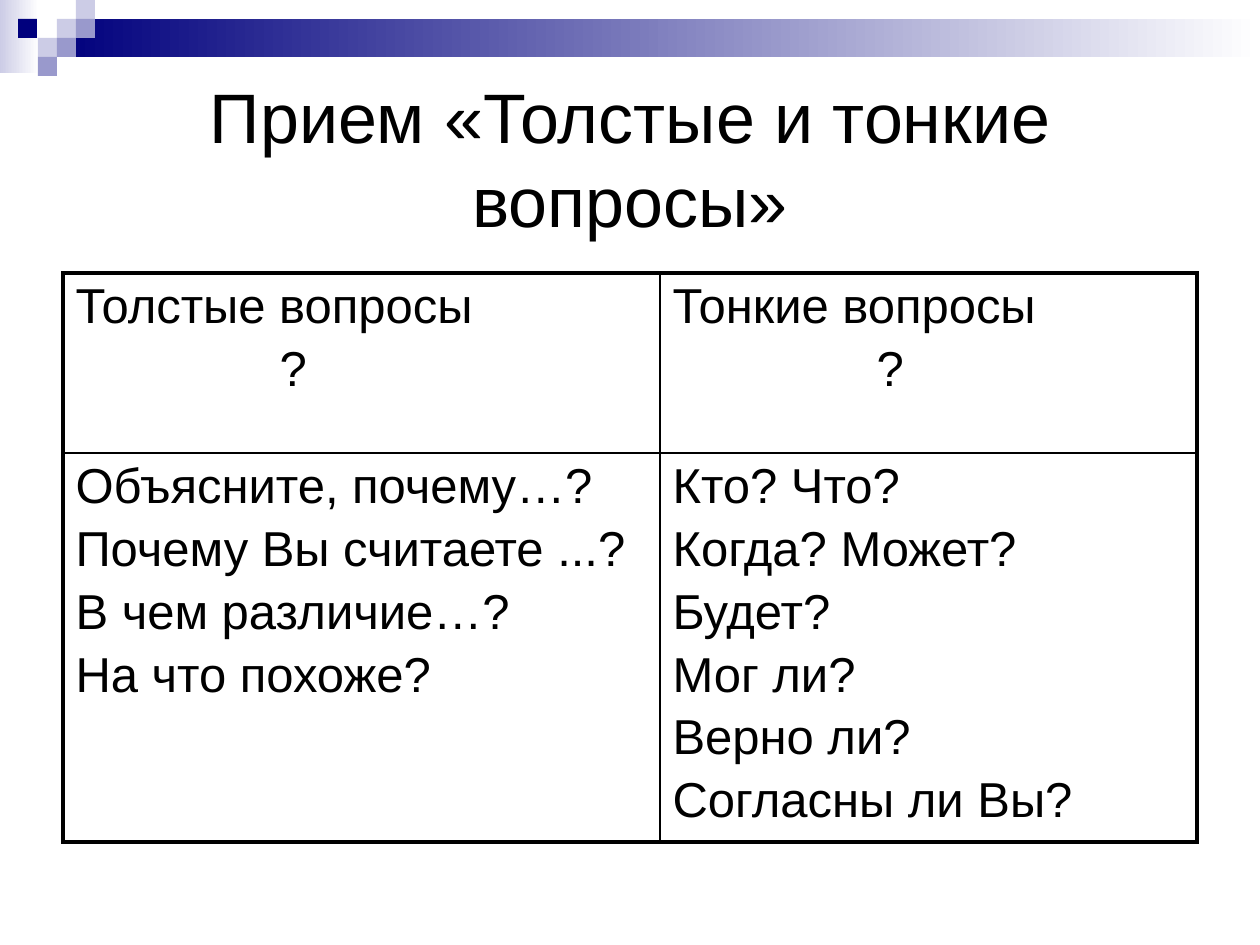
from lxml.etree import SubElement
from pptx import Presentation
from pptx.dml.color import RGBColor
from pptx.enum.shapes import MSO_SHAPE
from pptx.enum.text import MSO_ANCHOR, MSO_AUTO_SIZE, PP_ALIGN
from pptx.oxml import parse_xml
from pptx.oxml.ns import nsdecls, qn
from pptx.util import Pt

PX = 914400 // 126
NAVY = RGBColor(0x00, 0x00, 0x7D)
LILAC = RGBColor(0x99, 0x99, 0xCC)
PALE = RGBColor(0xCC, 0xCC, 0xE6)
WHITE = RGBColor(0xFF, 0xFF, 0xFF)
BLACK = RGBColor(0x00, 0x00, 0x00)


def add_rect(x, y, w, h, *colors):
    """Fill with one colour, or with a left-to-right gradient of two."""
    sp = s.shapes.add_shape(MSO_SHAPE.RECTANGLE, x * PX, y * PX, w * PX, h * PX)
    sp.shadow.inherit = False
    sp.line.fill.background()
    if len(colors) == 1:
        sp.fill.solid()
        sp.fill.fore_color.rgb = colors[0]
    else:
        sp.fill.gradient()
        sp.fill.gradient_angle = 0
        for stop, color in zip(sp.fill.gradient_stops, colors):
            stop.color.rgb = color


def set_font(p, size):
    for name, value in {"name": "Arial", "size": Pt(size), "bold": False}.items():
        setattr(p.font, name, value)
    p.font.color.rgb = BLACK


prs = Presentation()
prs.slide_width, prs.slide_height = 1260 * PX, 945 * PX
s = prs.slides.add_slide(prs.slide_layouts[5])

# Corner ornament: two fading bands and a checker of small squares
SQUARE = 19
add_rect(0, 0, 39, 73, PALE, WHITE)
add_rect(57, SQUARE, 1203, 2 * SQUARE, NAVY, WHITE)
for x, row, color in [(57, 1, PALE), (76, 0, PALE), (76, 1, LILAC), (38, 2, PALE),
                      (18, 1, NAVY), (57, 2, LILAC), (38, 3, LILAC)]:
    add_rect(x, row * SQUARE, SQUARE, SQUARE, color)

title = s.shapes.title
for name, value in {"left": 63, "top": 63, "width": 1134, "height": 189}.items():
    setattr(title, name, value * PX)
tf = title.text_frame
tf.text = "Прием «Толстые и тонкие вопросы»"
for name, value in {"word_wrap": True, "auto_size": MSO_AUTO_SIZE.NONE,
                    "vertical_anchor": MSO_ANCHOR.MIDDLE}.items():
    setattr(tf, name, value)
tf.paragraphs[0].alignment = PP_ALIGN.CENTER
set_font(tf.paragraphs[0], 40)

QUESTIONS = [
    [["Толстые вопросы", "?"], ["Тонкие вопросы", "?"]],
    [["Объясните, почему…?", "Почему Вы считаете ...?", "В чем различие…?",
      "На что похоже?"],
     ["Кто? Что?", "Когда? Может?", "Будет?", "Мог ли?", "Верно ли?",
      "Согласны ли Вы?"]],
]
COLS, ROWS = [597, 537], [180, 389]
MARK_INDENT = 204
THIN, THICK = 1, 2.25

table = s.shapes.add_table(2, 2, 63 * PX, 273 * PX, sum(COLS) * PX, sum(ROWS) * PX).table
table.first_row = table.horz_banding = False
for col, width in zip(table.columns, COLS):
    col.width = width * PX
for row, height in zip(table.rows, ROWS):
    row.height = height * PX

for r, row in enumerate(QUESTIONS):
    for c, lines in enumerate(row):
        cell = table.cell(r, c)
        cell.fill.background()
        cell.text = "\n".join(lines)
        for p in cell.text_frame.paragraphs:
            set_font(p, 28)
            p.space_before = Pt(4.7)
            if p.text == "?":
                p._p.get_or_add_pPr().set("marL", str(MARK_INDENT * PX))
        tcPr = cell._tc.get_or_add_tcPr()
        outer = {"lnL": c == 0, "lnR": c == 1, "lnT": r == 0, "lnB": r == 1}
        for i, (tag, is_outer) in enumerate(outer.items()):
            ln = parse_xml(f'<a:{tag} {nsdecls("a")}/>')
            ln.set("w", str(Pt(THICK if is_outer else THIN)))
            fill = SubElement(ln, qn("a:solidFill"))
            SubElement(fill, qn("a:srgbClr")).set("val", str(BLACK))
            tcPr.insert(i, ln)

prs.save("out.pptx")
